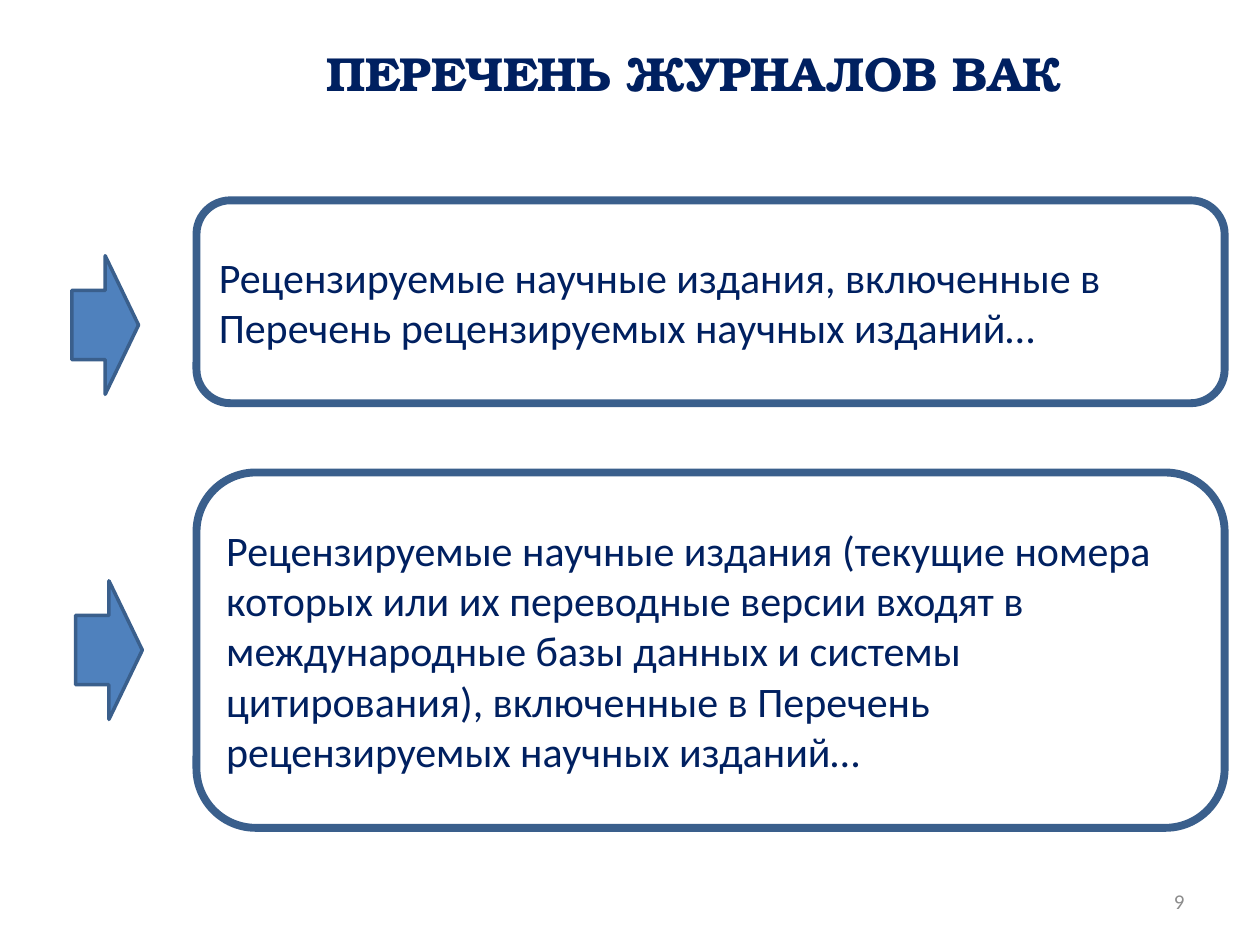
from pptx import Presentation
from pptx.dml.color import RGBColor
from pptx.enum.shapes import MSO_SHAPE
from pptx.enum.text import MSO_ANCHOR, MSO_AUTO_SIZE, PP_ALIGN
from pptx.util import Inches, Pt

ROUNDED, ARROW = MSO_SHAPE.ROUNDED_RECTANGLE, MSO_SHAPE.RIGHT_ARROW
TOP, MIDDLE = MSO_ANCHOR.TOP, MSO_ANCHOR.MIDDLE
LEFT, CENTER, RIGHT = PP_ALIGN.LEFT, PP_ALIGN.CENTER, PP_ALIGN.RIGHT
NO_AUTOFIT = MSO_AUTO_SIZE.NONE
NAVY, BLUE, OUTLINE, WHITE, GRAY = "002060", "4F81BD", "3A5F8C", "FFFFFF", "8C8C8C"


def write(shape, text, color, alignment, anchor, **font_format):
    frame = shape.text_frame
    frame.word_wrap = True
    frame.auto_size = NO_AUTOFIT
    frame.vertical_anchor = anchor
    paragraph = frame.paragraphs[0]
    paragraph.alignment = alignment
    run = paragraph.add_run()
    run.text = text
    run.font.color.rgb = RGBColor.from_string(color)
    for name, value in font_format.items():
        setattr(run.font, name, value)


def add_outlined(kind, box, fill, line_width):
    shape = slide.shapes.add_shape(kind, *map(Inches, box))
    shape.shadow.inherit = False
    shape.fill.solid()
    shape.fill.fore_color.rgb = RGBColor.from_string(fill)
    shape.line.color.rgb = RGBColor.from_string(OUTLINE)
    shape.line.width = Pt(line_width)
    return shape


presentation = Presentation()
presentation.slide_width, presentation.slide_height = Inches(10), Inches(7.5)
slide = presentation.slides.add_slide(presentation.slide_layouts[5])

title = slide.shapes.title
title.left, title.top = Inches(1.29), Inches(0.3)
title.width, title.height = Inches(8.44), Inches(0.69)
write(title, "ПЕРЕЧЕНЬ ЖУРНАЛОВ ВАК", NAVY, CENTER, TOP,
      name="TeX Gyre Bonum", size=Pt(27.3), bold=True)

# Top and height of each panel, position of its arrow, text
panels = [
    (1.59, 1.61, 0.57, 2.03,
     "Рецензируемые научные издания, включенные в Перечень рецензируемых научных изданий…"),
    (3.75, 2.82, 0.6, 4.61,
     "Рецензируемые научные издания (текущие номера которых или их переводные версии "
     "входят в международные базы данных и системы цитирования), включенные в Перечень "
     "рецензируемых научных изданий…"),
]
for top, height, arrow_left, arrow_top, text in panels:
    panel = add_outlined(ROUNDED, (1.56, top, 8.16, height), WHITE, 4.5)
    write(panel, text, NAVY, LEFT, MIDDLE, name="Calibri", size=Pt(24))
    add_outlined(ARROW, (arrow_left, arrow_top, 0.53, 1.1), BLUE, 2)

page_number = slide.shapes.add_textbox(Inches(7.17), Inches(6.95), Inches(2.33), Inches(0.4))
write(page_number, "9", GRAY, RIGHT, MIDDLE, name="Calibri", size=Pt(12))

presentation.save("out.pptx")
